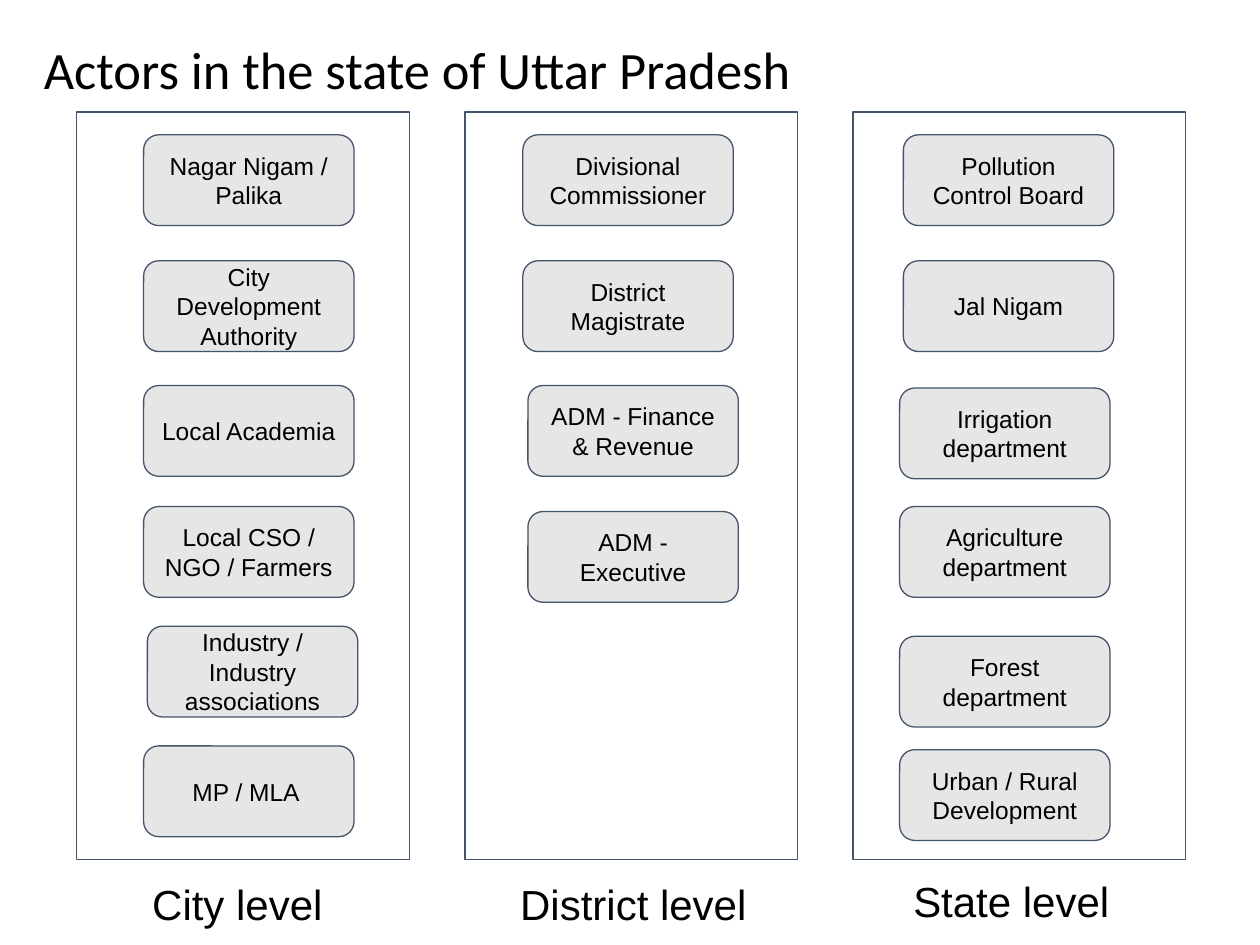
from dataclasses import dataclass

from pptx import Presentation
from pptx.dml.color import RGBColor
from pptx.enum.shapes import MSO_SHAPE
from pptx.enum.text import MSO_ANCHOR, PP_ALIGN
from pptx.shapes.autoshape import Shape
from pptx.slide import Slide
from pptx.util import Inches, Pt


@dataclass(frozen=True)
class Theme:
    text: RGBColor = RGBColor(0x00, 0x00, 0x00)
    line: RGBColor = RGBColor(0x44, 0x54, 0x6A)
    box: RGBColor = RGBColor(0xE7, 0xE6, 0xE6)
    title_font: str = "Calibri"
    body_font: str = "Arial"
    title_size: int = 30
    label_size: int = 24
    actor_size: int = 14
    line_width: float = 0.75


@dataclass(frozen=True)
class Box:
    """A rectangle in inches."""
    left: float
    top: float
    width: float
    height: float

    def lengths(self) -> tuple[Inches, ...]:
        return tuple(Inches(n) for n in (self.left, self.top, self.width, self.height))


@dataclass(frozen=True)
class Actor:
    """A named box; right and down shift it from its grid place."""
    name: str
    right: float = 0
    down: float = 0


@dataclass(frozen=True)
class Level:
    """One column; indents are measured from the left of its frame."""
    name: str
    actor_indent: float
    label_indent: float
    label_top: float
    actors: tuple[Actor, ...]


THEME = Theme()
FRAME = Box(0.61, 0.89, 2.64, 5.93)
COLUMN_PITCH = 3.08
ROW_TOPS = (1.07, 2.07, 3.06, 4.02, 4.97, 5.92)
ACTOR_WIDTH, ACTOR_HEIGHT = 1.67, 0.72
LABEL_WIDTH, LABEL_HEIGHT = 2.4, 0.56

LEVELS = (
    Level("City level", 0.53, 0.5, 6.87, (
        Actor("Nagar Nigam / Palika"),
        Actor("City Development Authority"),
        Actor("Local Academia"),
        Actor("Local CSO / NGO / Farmers"),
        Actor("Industry / Industry associations", right=0.03),
        Actor("MP / MLA "),
    )),
    Level("District level", 0.46, 0.34, 6.87, (
        Actor("Divisional Commissioner"),
        Actor("District Magistrate"),
        Actor("ADM - Finance & Revenue", right=0.04),
        Actor("ADM - Executive", right=0.04, down=0.04),
    )),
    Level("State level", 0.37, 0.38, 6.85, (
        Actor("Pollution Control Board", right=0.03),
        Actor("Jal Nigam", right=0.03),
        Actor("Irrigation department", down=0.02),
        Actor("Agriculture department"),
        Actor("Forest department", down=0.08),
        Actor("Urban / Rural Development", down=0.03),
    )),
)


def write(shape: Shape, text: str, size: int, font: str, anchor: MSO_ANCHOR,
          alignment: PP_ALIGN = PP_ALIGN.LEFT, line_spacing: float = 1.0) -> None:
    frame = shape.text_frame
    frame.word_wrap = True
    frame.vertical_anchor = anchor
    frame.margin_left = frame.margin_right = Inches(0.1)
    frame.margin_top = frame.margin_bottom = Inches(0.1)
    paragraph = frame.paragraphs[0]
    paragraph.text = text
    paragraph.alignment = alignment
    paragraph.line_spacing = line_spacing
    paragraph.font.size = Pt(size)
    paragraph.font.name = font
    paragraph.font.color.rgb = THEME.text


def add_outlined(slide: Slide, kind: MSO_SHAPE, box: Box) -> Shape:
    shape = slide.shapes.add_shape(kind, *box.lengths())
    shape.shadow.inherit = False
    shape.fill.background()
    shape.line.color.rgb = THEME.line
    shape.line.width = Pt(THEME.line_width)
    return shape


def add_actor(slide: Slide, actor: Actor, left: float, top: float) -> None:
    box = Box(left + actor.right, top + actor.down, ACTOR_WIDTH, ACTOR_HEIGHT)
    shape = add_outlined(slide, MSO_SHAPE.ROUNDED_RECTANGLE, box)
    shape.fill.solid()
    shape.fill.fore_color.rgb = THEME.box
    write(shape, actor.name, THEME.actor_size, THEME.body_font,
          MSO_ANCHOR.MIDDLE, PP_ALIGN.CENTER)


def add_level(slide: Slide, level: Level, column: int) -> None:
    left = FRAME.left + column * COLUMN_PITCH
    add_outlined(slide, MSO_SHAPE.RECTANGLE,
                 Box(left, FRAME.top, FRAME.width, FRAME.height))
    for actor, top in zip(level.actors, ROW_TOPS):
        add_actor(slide, actor, left + level.actor_indent, top)
    label_box = Box(left + level.label_indent, level.label_top, LABEL_WIDTH, LABEL_HEIGHT)
    label = slide.shapes.add_textbox(*label_box.lengths())
    write(label, level.name, THEME.label_size, THEME.body_font, MSO_ANCHOR.TOP)


def main() -> None:
    presentation = Presentation()
    presentation.slide_width = Inches(10)
    presentation.slide_height = Inches(7.5)
    slide = presentation.slides.add_slide(presentation.slide_layouts[6])
    for column, level in enumerate(LEVELS):
        add_level(slide, level, column)
    title = slide.shapes.add_textbox(*Box(0.25, 0, 9.35, 0.9).lengths())
    write(title, "Actors in the state of Uttar Pradesh", THEME.title_size,
          THEME.title_font, MSO_ANCHOR.BOTTOM, line_spacing=0.9)
    presentation.save("out.pptx")


if __name__ == "__main__":
    main()
